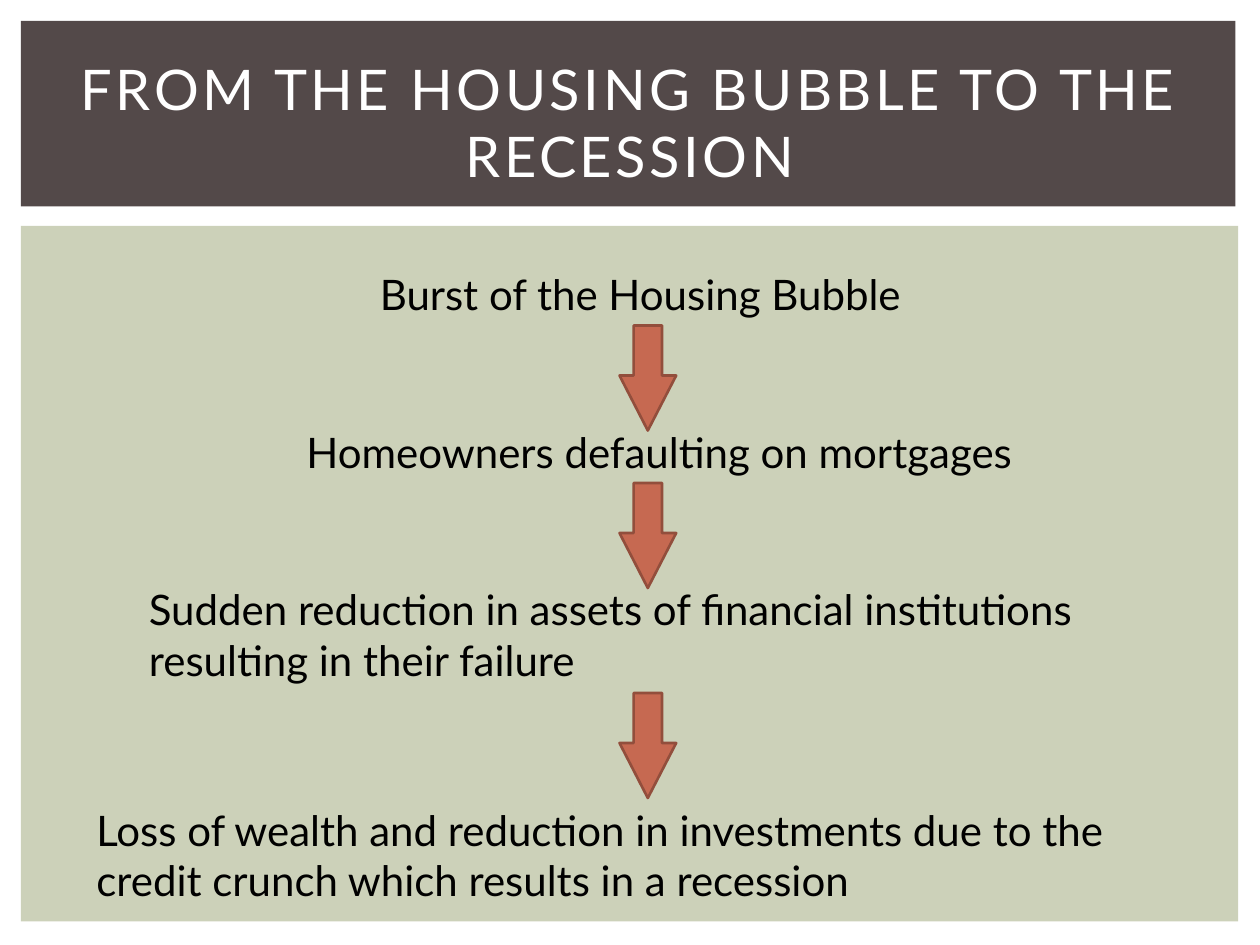
from typing import NamedTuple

from pptx import Presentation
from pptx import util as u
from pptx.dml.color import RGBColor
from pptx.enum import shapes, text

WHITE = RGBColor(0xFF, 0xFF, 0xFF)
BLACK = RGBColor(0x00, 0x00, 0x00)
SAGE = RGBColor(0xCC, 0xD1, 0xB9)
BROWN = RGBColor(0x53, 0x49, 0x49)
RUST = RGBColor(0xC6, 0x69, 0x51)
DARK_RUST = RGBColor(0x92, 0x4E, 0x3C)

TITLE = "FROM THE HOUSING BUBBLE TO THE RECESSION"
TITLE_FONT = {"name": "Lato", "size": u.Pt(32), "bold": False}
STEP_FONT = {"name": "Lato", "size": u.Pt(24)}
ARROW_LEFT, ARROW_WIDTH, ARROW_HEIGHT = 354, 32.4, 60


class Box(NamedTuple):
    left: float
    top: float
    width: float
    height: float

    def lengths(self) -> list:
        return [u.Pt(value) for value in self]


class Step(NamedTuple):
    words: str
    box: Box
    wrap: bool


HEADER = Box(12, 12, 694, 106)
PANEL = Box(12, 129, 695.5, 397.5)
TITLE_BOX = Box(30, 28, 660, 83)
STEPS = [
    Step("Burst of the Housing Bubble", Box(210, 150, 332, 36), False),
    Step("Homeowners defaulting on mortgages", Box(168, 240, 468, 36), False),
    Step(
        "Sudden reduction in assets of financial institutions resulting in their failure",
        Box(78, 330, 588, 66),
        True,
    ),
    Step(
        "Loss of wealth and reduction in investments due to the credit crunch "
        "which results in a recession",
        Box(48, 456, 648, 66),
        True,
    ),
]


def format_font(font, values: dict, color: RGBColor) -> None:
    for name, value in values.items():
        setattr(font, name, value)
    font.color.rgb = color


def add_filled(slide, kind, box: Box, color: RGBColor):
    shape = slide.shapes.add_shape(kind, *box.lengths())
    shape.shadow.inherit = False
    shape.fill.solid()
    shape.fill.fore_color.rgb = color
    shape.line.fill.background()
    return shape


def add_arrow(slide, top: float) -> None:
    box = Box(ARROW_LEFT, top, ARROW_WIDTH, ARROW_HEIGHT)
    arrow = add_filled(slide, shapes.MSO_SHAPE.DOWN_ARROW, box, RUST)
    arrow.adjustments[0] = 0.5
    arrow.adjustments[1] = 0.97
    arrow.line.color.rgb = DARK_RUST
    arrow.line.width = u.Pt(1.5)


def add_step(slide, step: Step) -> None:
    frame = slide.shapes.add_textbox(*step.box.lengths()).text_frame
    frame.word_wrap = step.wrap
    frame.auto_size = text.MSO_AUTO_SIZE.SHAPE_TO_FIT_TEXT
    run = frame.paragraphs[0].add_run()
    run.text = step.words
    format_font(run.font, STEP_FONT, BLACK)


def place_title(slide) -> None:
    title = slide.shapes.title
    slide.shapes._spTree.append(title._element)
    for name, value in zip(Box._fields, TITLE_BOX.lengths()):
        setattr(title, name, value)
    frame = title.text_frame
    frame.word_wrap = True
    frame.auto_size = text.MSO_AUTO_SIZE.NONE
    frame.vertical_anchor = text.MSO_ANCHOR.MIDDLE
    paragraph = frame.paragraphs[0]
    paragraph.alignment = text.PP_ALIGN.CENTER
    run = paragraph.add_run()
    run.text = TITLE
    format_font(run.font, TITLE_FONT, WHITE)
    run._r.get_or_add_rPr().set("spc", "200")


def main() -> None:
    presentation = Presentation()
    presentation.slide_width, presentation.slide_height = u.Pt(720), u.Pt(540)
    slide = presentation.slides.add_slide(presentation.slide_layouts[5])
    for box, color in ((PANEL, SAGE), (HEADER, BROWN)):
        add_filled(slide, shapes.MSO_SHAPE.RECTANGLE, box, color)
    place_title(slide)
    for step in STEPS:
        add_step(slide, step)
    for step in STEPS[:-1]:
        add_arrow(slide, step.box.top + step.box.height)
    presentation.save("out.pptx")


if __name__ == "__main__":
    main()
